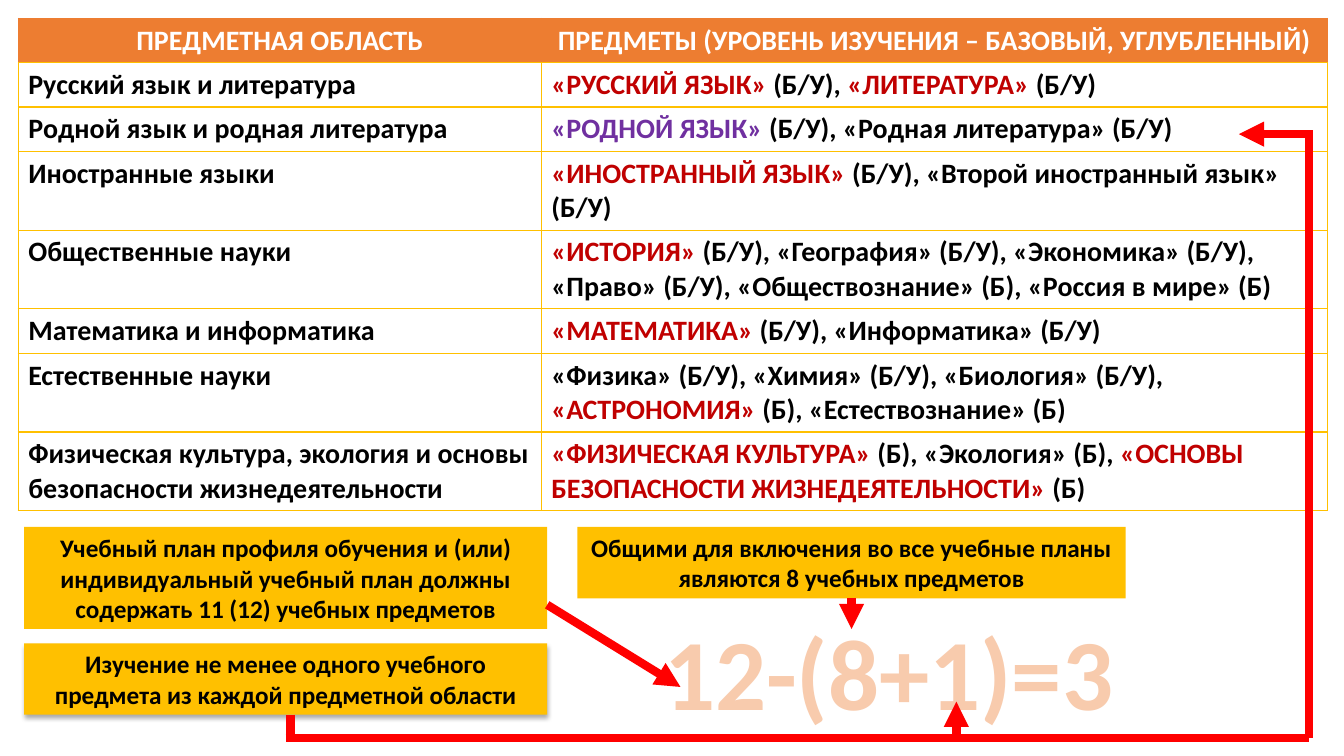
from lxml.etree import SubElement
from pptx import Presentation
from pptx.dml.color import RGBColor
from pptx.enum.shapes import MSO_CONNECTOR, MSO_SHAPE
from pptx.enum.text import MSO_ANCHOR, MSO_AUTO_SIZE, PP_ALIGN
from pptx.oxml import parse_xml
from pptx.oxml.ns import nsdecls, qn
from pptx.util import Cm, Pt

COLORS = {
    "gold": "FFC000",
    "orange": "ED7D31",
    "peach": "F8CBAD",
    "arrow": "FF0000",
    "red": "C00000",
    "purple": "7030A0",
    "black": "000000",
    "white": "FFFFFF",
}

HEADINGS = ("ПРЕДМЕТНАЯ ОБЛАСТЬ", "ПРЕДМЕТЫ (УРОВЕНЬ ИЗУЧЕНИЯ – БАЗОВЫЙ, УГЛУБЛЕННЫЙ)")

# Subject area, then paragraphs of (colour, text) spans
SUBJECTS = [
    ("Русский язык и литература",
     [("red", "«РУССКИЙ ЯЗЫК» "), ("black", "(Б/У), "),
      ("red", "«ЛИТЕРАТУРА» "), ("black", "(Б/У)")]),
    ("Родной язык и родная литература",
     [("purple", "«РОДНОЙ ЯЗЫК» "), ("black", "(Б/У), «Родная литература» (Б/У)")]),
    ("Иностранные языки",
     [("red", "«ИНОСТРАННЫЙ ЯЗЫК» "), ("black", "(Б/У), «Второй иностранный язык» (Б/У)")]),
    ("Общественные науки",
     [("red", "«ИСТОРИЯ» "),
      ("black", "(Б/У), «География» (Б/У), «Экономика» (Б/У), «Право» (Б/У), "
                "«Обществознание» (Б), «Россия в мире» (Б)")]),
    ("Математика и информатика",
     [("red", "«МАТЕМАТИКА» "), ("black", "(Б/У), «Информатика» (Б/У)")]),
    ("Естественные науки",
     [("black", "«Физика» (Б/У), «Химия» (Б/У), «Биология» (Б/У),")],
     [("red", "«АСТРОНОМИЯ» "), ("black", "(Б), «Естествознание» (Б)")]),
    ("Физическая культура, экология и основы безопасности жизнедеятельности",
     [("red", "«ФИЗИЧЕСКАЯ КУЛЬТУРА» "), ("black", "(Б), «Экология» (Б), "),
      ("red", "«ОСНОВЫ БЕЗОПАСНОСТИ ЖИЗНЕДЕЯТЕЛЬНОСТИ»"), ("black", " (Б)")]),
]


def rgb(color):
    return RGBColor.from_string(COLORS[color])


class SlideBuilder:
    font = "Calibri"

    def __init__(self, page):
        self.page = page

    def style(self, para, size, color, align=PP_ALIGN.LEFT):
        para.alignment = align
        para.font.name = self.font
        para.font.size = Pt(size)
        para.font.bold = True
        para.font.color.rgb = rgb(color)

    def border(self, cell, sides, color, width):
        """Add cell borders; sides must follow the order L, R, T, B."""
        properties = cell._tc.get_or_add_tcPr()
        for side in sides:
            line = SubElement(properties, qn(f"a:ln{side}"), w=str(Pt(width)))
            fill = SubElement(line, qn("a:solidFill"))
            SubElement(fill, qn("a:srgbClr"), val=COLORS[color])

    def fill_cell(self, cell, paragraphs, color, align):
        for index, spans in enumerate(paragraphs):
            frame = cell.text_frame
            para = frame.add_paragraph() if index else frame.paragraphs[0]
            self.style(para, 20, color, align)
            for span_color, text in spans:
                span = para.add_run()
                span.text = text
                span.font.color.rgb = rgb(span_color)

    def table(self, left, top, widths, row_height, headings, rows):
        count = len(rows) + 1
        table = self.page.shapes.add_table(
            count, len(widths), Cm(left), Cm(top),
            Cm(sum(widths)), Cm(row_height * count)).table
        table.horz_banding = False
        for column, width in zip(table.columns, widths):
            column.width = Cm(width)
        for row in table.rows:
            row.height = Cm(row_height)
        for column, heading in enumerate(headings):
            cell = table.cell(0, column)
            self.fill_cell(cell, [[("white", heading)]], "white", PP_ALIGN.CENTER)
            self.border(cell, "LRT", "orange", 0.5)
            self.border(cell, "B", "gold", 1)
            cell.fill.solid()
            cell.fill.fore_color.rgb = rgb("orange")
        for index, (area, *subjects) in enumerate(rows, start=1):
            for column, paragraphs in enumerate(([[("black", area)]], subjects)):
                cell = table.cell(index, column)
                self.fill_cell(cell, paragraphs, "black", PP_ALIGN.LEFT)
                self.border(cell, "LRTB", "gold", 1)
                cell.fill.background()

    def note(self, left, top, width, height, text, shadow=False):
        box = self.page.shapes.add_shape(
            MSO_SHAPE.RECTANGLE, Cm(left), Cm(top), Cm(width), Cm(height))
        box.fill.solid()
        box.fill.fore_color.rgb = rgb("gold")
        box.line.fill.background()
        box.shadow.inherit = False
        if shadow:
            effects = box._element.spPr.find(qn("a:effectLst"))
            effects.append(parse_xml(
                f'<a:outerShdw {nsdecls("a")} blurRad="{Pt(3.5)}" dist="{Pt(2.2)}" '
                f'dir="5400000" rotWithShape="0"><a:srgbClr val="{COLORS["black"]}">'
                '<a:alpha val="32000"/></a:srgbClr></a:outerShdw>'))
        frame = box.text_frame
        frame.word_wrap = True
        frame.auto_size = MSO_AUTO_SIZE.SHAPE_TO_FIT_TEXT
        frame.vertical_anchor = MSO_ANCHOR.MIDDLE
        frame.text = text
        self.style(frame.paragraphs[0], 18, "black", PP_ALIGN.CENTER)
        return box

    def formula(self, left, top, width, height, text):
        box = self.page.shapes.add_textbox(Cm(left), Cm(top), Cm(width), Cm(height))
        frame = box.text_frame
        frame.word_wrap = False
        frame.auto_size = MSO_AUTO_SIZE.SHAPE_TO_FIT_TEXT
        frame.text = text
        para = frame.paragraphs[0]
        self.style(para, 72, "peach", PP_ALIGN.CENTER)
        para.runs[0]._r.get_or_add_rPr().insert(0, parse_xml(
            f'<a:ln {nsdecls("a")} w="{Pt(1.75)}"><a:solidFill>'
            f'<a:srgbClr val="{COLORS["orange"]}"/></a:solidFill></a:ln>'))

    def line(self, start, end, arrow=False):
        connector = self.page.shapes.add_connector(
            MSO_CONNECTOR.STRAIGHT, *(Cm(value) for value in (*start, *end)))
        connector.line.color.rgb = rgb("arrow")
        connector.line.width = Pt(6)
        if arrow:
            SubElement(connector.line._get_or_add_ln(), qn("a:tailEnd"), type="triangle")
        SubElement(connector._element.spPr, qn("a:effectLst"))
        return connector


def main():
    deck = Presentation()
    deck.slide_width, deck.slide_height = Cm(33.87), Cm(19.05)
    slide = SlideBuilder(deck.slides.add_slide(deck.slide_layouts[6]))

    slide.table(0.46, 0.46, (13.18, 19.81), 1.04, HEADINGS, SUBJECTS)

    slide.note(0.61, 13.28, 13.18, 2.57,
               "Учебный план профиля обучения и (или) индивидуальный учебный план "
               "должны содержать 11 (12) учебных предметов")
    slide.note(0.61, 16.21, 13.18, 1.8,
               "Изучение не менее одного учебного предмета из каждой предметной области",
               shadow=True)
    common = slide.note(14.55, 13.28, 13.82, 1.8,
                        "Общими для включения во все учебные планы "
                        "являются 8 учебных предметов")
    slide.formula(16.43, 15.24, 11.94, 3.33, "12-(8+1)=3")

    slide.line((13.79, 15.24), (17.15, 19.3), arrow=True).end_y = Cm(17.31)
    slide.line((21.46, 15.08), (21.46, 15.85), arrow=True).begin_connect(common, 2)

    # Path from the lower note to the native language row
    rail, right, target = 18.59, 32.99, 3.38
    slide.line((7.32, 18.01), (7.32, rail))
    slide.line((7.2, rail), (right, rail))
    slide.line((right, rail), (right, 3.28))
    slide.line((right, target), (31.22, target), arrow=True)
    slide.line((24.1, rail), (24.1, 17.68), arrow=True)

    deck.save("out.pptx")


if __name__ == "__main__":
    main()
